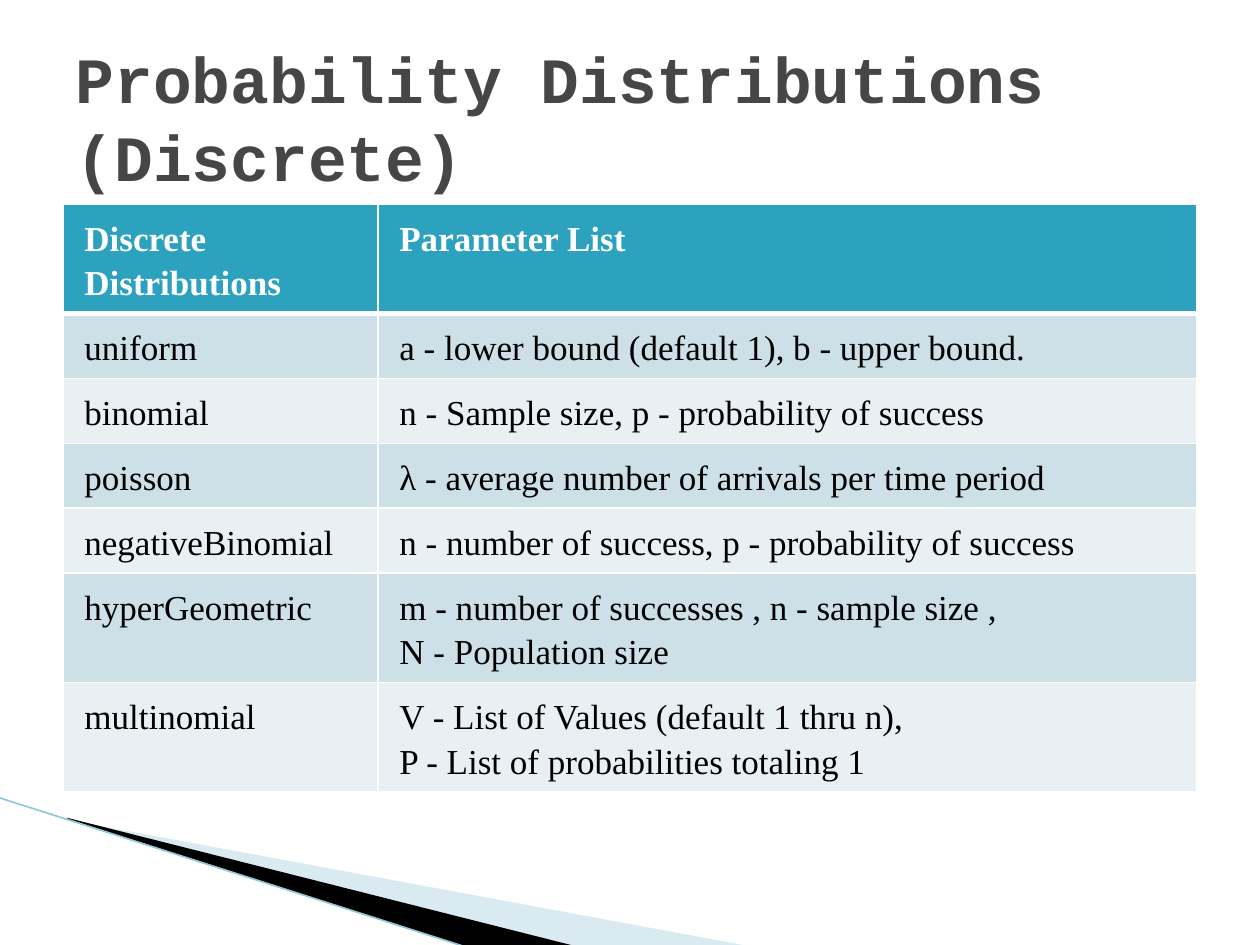
from lxml import etree
from pptx import Presentation
from pptx.dml.color import RGBColor
from pptx.enum.shapes import MSO_CONNECTOR
from pptx.enum.text import MSO_ANCHOR, MSO_AUTO_SIZE, PP_ALIGN
from pptx.oxml.ns import qn
from pptx.util import Inches, Pt

ROWS = [
    ("Discrete Distributions", "Parameter List"),
    ("uniform", "a - lower bound (default 1), b - upper bound."),
    ("binomial", "n - Sample size, p - probability of success"),
    ("poisson", "λ - average number of arrivals per time period"),
    ("negativeBinomial", "n - number of success, p - probability of success"),
    ("hyperGeometric", "m - number of successes , n - sample size ,\nN - Population size"),
    ("multinomial", "V - List of Values (default 1 thru n),\nP - List of probabilities totaling 1"),
]
HEADER_FILL, BAND_FILLS = "2DA2BF", ("CDE0E8", "E8F0F4")


def color(hex_text):
    return RGBColor.from_string(hex_text)


def add_wedge(page, left, top, points, fill, opacity=100):
    """Draw a filled outline whose points are relative to left and top."""
    corners = [(Inches(left + x), Inches(top + y)) for x, y in points]
    builder = page.shapes.build_freeform(*corners[0], scale=1.0)
    builder.add_line_segments(corners[1:], close=True)
    wedge = builder.convert_to_shape()
    wedge.shadow.inherit = False
    wedge.fill.solid()
    wedge.fill.fore_color.rgb = color(fill)
    wedge.line.fill.background()
    if opacity < 100:
        fill_color = wedge.fill._xPr.find(".//" + qn("a:srgbClr"))
        etree.SubElement(fill_color, qn("a:alpha"), val=str(opacity * 1000))


def add_corner(page, left, top):
    """Place the swoosh in the lower left corner."""
    add_wedge(page, left + 0.56, top + 0.17,
              [(0, 0.01), (5.4, 1.01), (4.01, 1.01), (0, 0)], "A0CBDC", 40)
    add_wedge(page, left + 0.54, top + 0.16,
              [(0, 0), (4.04, 1.02), (3.19, 1.03), (0.01, 0.01)], "000000")
    edge = page.shapes.add_connector(
        MSO_CONNECTOR.STRAIGHT, Inches(left), Inches(top),
        Inches(left + 3.72), Inches(top + 1.19))
    edge.line.color.rgb = color("97C5D8")
    edge.line.width = Pt(0.95)
    etree.SubElement(edge._element.spPr, qn("a:effectLst"))


def set_title(page, left, top, width, height):
    title = page.shapes.title
    title.left, title.top = Inches(left), Inches(top)
    title.width, title.height = Inches(width), Inches(height)
    frame = title.text_frame
    frame.text = "Probability Distributions (Discrete)"
    frame.word_wrap = True
    frame.auto_size = MSO_AUTO_SIZE.NONE
    frame.vertical_anchor = MSO_ANCHOR.MIDDLE
    para = frame.paragraphs[0]
    para.alignment = PP_ALIGN.LEFT
    para.font.name, para.font.size, para.font.bold = "Courier New", Pt(36.9), True
    para.font.color.rgb = color("464646")


def set_borders(cell, widths):
    """Give the cell white borders; widths maps each side to points."""
    properties = cell._tc.get_or_add_tcPr()
    for side in "LRTB":
        line = etree.SubElement(properties, qn("a:ln" + side), w=str(Pt(widths[side])))
        fill = etree.SubElement(line, qn("a:solidFill"))
        etree.SubElement(fill, qn("a:srgbClr"), val="FFFFFF")


def fill_cell(cell, text, row):
    header = row == 0
    cell.margin_left = cell.margin_right = Inches(0.17)
    cell.margin_top = cell.margin_bottom = Inches(0.08)
    set_borders(cell, {"L": 1, "R": 1, "T": 3 if row == 1 else 1, "B": 3 if header else 1})
    cell.fill.solid()
    cell.fill.fore_color.rgb = color(HEADER_FILL if header else BAND_FILLS[(row - 1) % 2])
    cell.text_frame.text = text
    for para in cell.text_frame.paragraphs:
        para.line_spacing = 1.15
        para.font.name, para.font.size, para.font.bold = "Times New Roman", Pt(20), header
        para.font.color.rgb = color("FFFFFF" if header else "000000")


def add_distributions(page, left, top, width):
    row_height, name_width = 0.41, 2.5
    table = page.shapes.add_table(
        len(ROWS), 2, Inches(left), Inches(top),
        Inches(width), Inches(row_height * len(ROWS))).table
    table.columns[0].width = Inches(name_width)
    table.columns[1].width = Inches(width - name_width)
    for row, texts in enumerate(ROWS):
        for column, text in enumerate(texts):
            fill_cell(table.cell(row, column), text, row)


def main():
    deck = Presentation()
    deck.slide_width, deck.slide_height = Inches(10), Inches(7.5)
    page = deck.slides.add_slide(deck.slide_layouts[5])
    add_corner(page, -0.01, 6.33)
    set_title(page, 0.5, 0.3, 9, 1.25)
    add_distributions(page, 0.5, 1.62, 9)
    deck.save("out.pptx")


if __name__ == "__main__":
    main()
